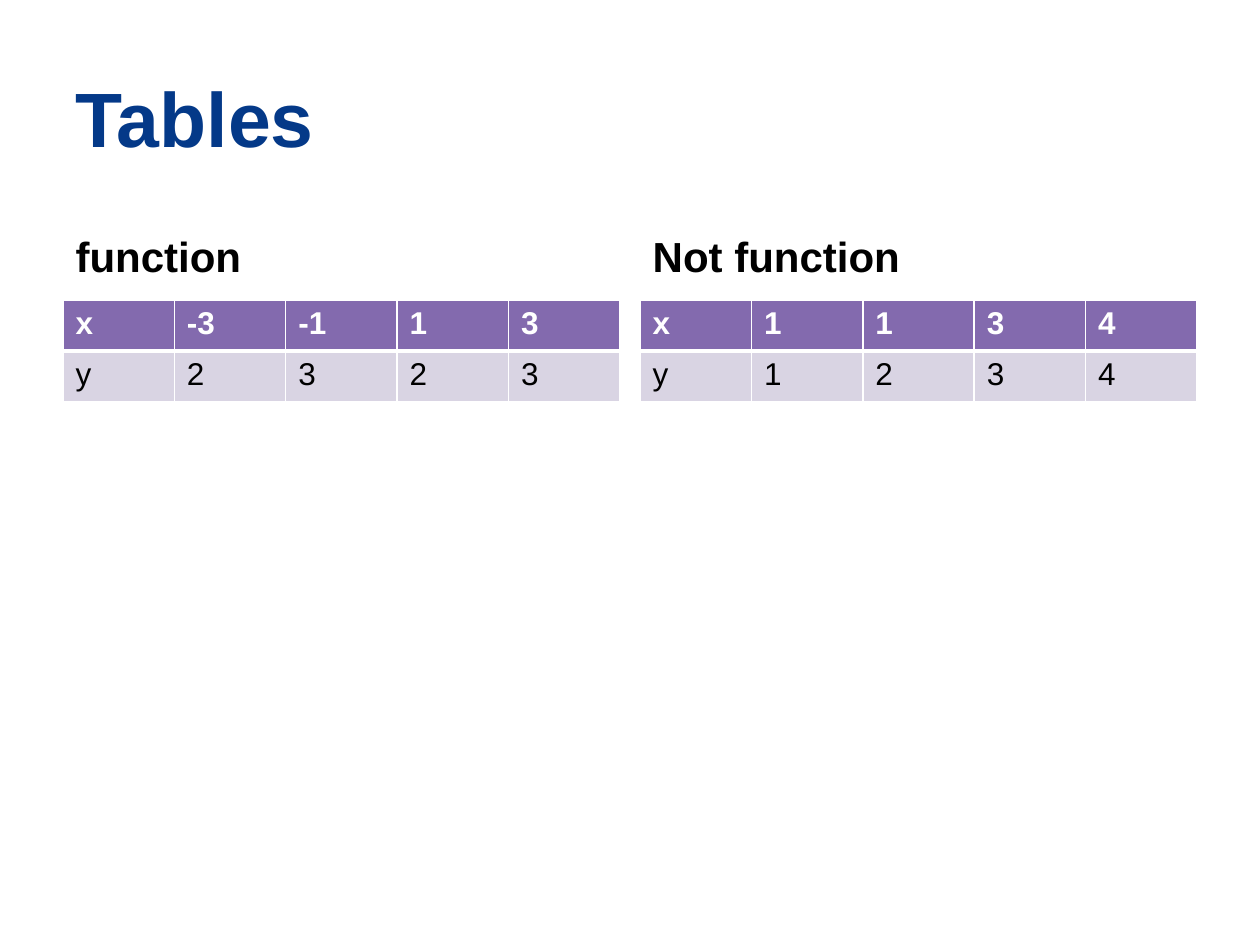
import pptx
import pptx.dml.color
import pptx.enum.text
import pptx.oxml
import pptx.oxml.ns
import pptx.util
from pptx.util import Inches

COLORS = {
    "title": "043988",
    "text": "000000",
    "white": "FFFFFF",
    "header": "836AAE",
    "band": "D9D4E3",
}
FONT = "Arial"
COLUMN_WIDTH = 4.42
TABLE_TOP = 2.38
ROW_HEIGHT = 0.405
COMPARISONS = [
    ("function", 0.5, 1, [["x", "-3", "-1", "1", "3"], ["y", "2", "3", "2", "3"]]),
    ("Not function", 5.08, 3, [["x", "1", "1", "3", "4"], ["y", "1", "2", "3", "4"]]),
]


def rgb(name):
    return pptx.dml.color.RGBColor.from_string(COLORS[name])


def write_text(frame, text, size, color, bold):
    para = frame.paragraphs[0]
    para.alignment = pptx.enum.text.PP_ALIGN.LEFT
    span = para.add_run()
    span.text = text
    values = {"name": FONT, "size": pptx.util.Pt(size), "bold": bold}
    for name, value in values.items():
        setattr(span.font, name, value)
    span.font.color.rgb = rgb(color)
    return para


def fill_placeholder(box, place, text, size, color):
    for name, value in zip(("left", "top", "width", "height"), place):
        setattr(box, name, Inches(value))
    values = {
        "word_wrap": True,
        "auto_size": pptx.enum.text.MSO_AUTO_SIZE.NONE,
        "vertical_anchor": pptx.enum.text.MSO_ANCHOR.MIDDLE,
    }
    for name, value in values.items():
        setattr(box.text_frame, name, value)
    return write_text(box.text_frame, text, size, color, True)


def set_borders(cell, widths):
    properties = cell._tc.get_or_add_tcPr()
    namespace = pptx.oxml.ns.nsdecls("a")
    for index, (side, width) in enumerate(widths.items()):
        line = pptx.oxml.parse_xml(
            f'<a:ln{side} {namespace} w="{pptx.util.Pt(width)}"><a:solidFill>'
            f'<a:srgbClr val="{COLORS["white"]}"/></a:solidFill></a:ln{side}>'
        )
        properties.insert(index, line)


def add_value_table(slide, left, rows):
    table = slide.shapes.add_table(
        len(rows), len(rows[0]), Inches(left), Inches(TABLE_TOP),
        Inches(COLUMN_WIDTH), Inches(ROW_HEIGHT * len(rows)),
    ).table
    for row_index, row in enumerate(rows):
        header = row_index == 0
        widths = {"L": 1, "R": 1, "T": 1 if header else 3, "B": 3 if header else 1}
        for column_index, text in enumerate(row):
            cell = table.cell(row_index, column_index)
            cell.fill.solid()
            cell.fill.fore_color.rgb = rgb("header" if header else "band")
            set_borders(cell, widths)
            write_text(cell.text_frame, text, 18, "white" if header else "text", header)


def remove_empty_placeholders(slide):
    for box in list(slide.placeholders):
        if not box.text_frame.text:
            box.element.getparent().remove(box.element)


def main():
    deck = pptx.Presentation()
    deck.slide_width = Inches(10)
    deck.slide_height = Inches(7.5)
    slide = deck.slides.add_slide(deck.slide_layouts.get_by_name("Comparison"))
    fill_placeholder(slide.shapes.title, (0.5, 0.3, 9, 1.25), "Tables", 44, "title")
    for heading, left, placeholder, rows in COMPARISONS:
        para = fill_placeholder(
            slide.placeholders[placeholder],
            (left, 1.68, COLUMN_WIDTH, 0.7), heading, 24, "text",
        )
        para.space_before = pptx.util.Pt(4.8)
        add_value_table(slide, left, rows)
    remove_empty_placeholders(slide)
    deck.save("out.pptx")


if __name__ == "__main__":
    main()
